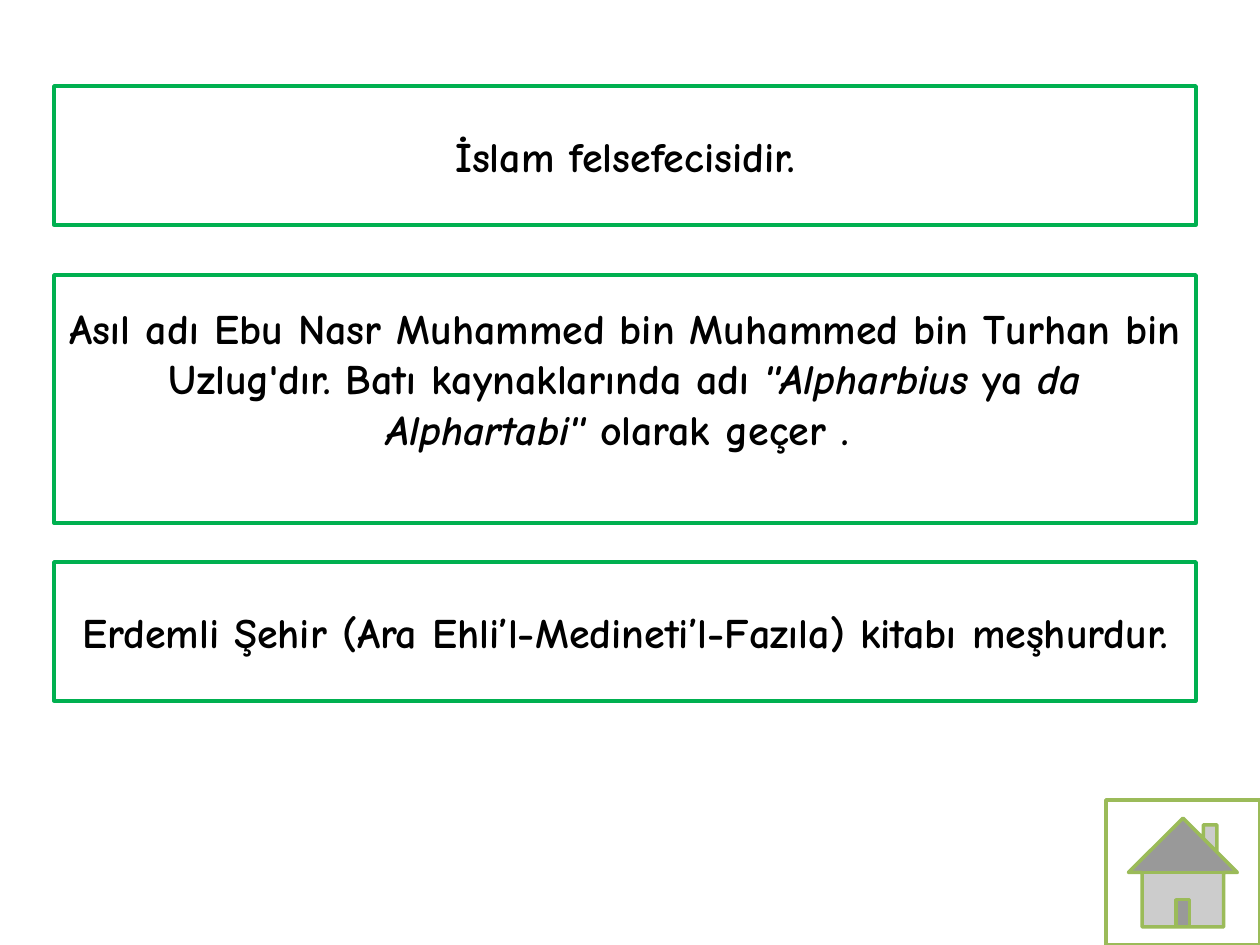
from pptx import Presentation
from pptx.dml.color import RGBColor
from pptx.enum.shapes import MSO_SHAPE as Shape
from pptx.enum.text import MSO_ANCHOR as Anchor, PP_ALIGN as Align
from pptx.util import Pt

PX = 914400 // 126
FONT = "Comic Neue"
COLORS = {"paper": "FFFFFF", "ink": "000000", "frame": "00B050", "home": "9BBB59"}

CARD_LEFT, CARD_WIDTH = 54, 1142
CARDS = [
    {"top": 86, "height": 139, "bottom_inset": 6,
     "parts": [("İslam felsefecisidir.", False)]},
    {"top": 275, "height": 248, "bottom_inset": 48,
     "parts": [
         ("Asıl adı Ebu Nasr Muhammed bin Muhammed bin Turhan bin Uzlug'dır. "
          "Batı kaynaklarında adı ", False),
         ("''Alpharbius ", True),
         ("ya ", False),
         ("da Alphartabi'' ", True),
         ("olarak geçer . ", False),
     ]},
    {"top": 562, "height": 139, "bottom_inset": 6,
     "parts": [("Erdemli Şehir (Ara Ehli’l-Medineti’l-Fazıla) kitabı meşhurdur.", False)]},
]
HOME_BOX = (1106, 800, 154, 145)


def rgb(name):
    return RGBColor.from_string(COLORS[name])


def add_framed(slide, kind, box, frame):
    framed = slide.shapes.add_shape(kind, *(length * PX for length in box))
    framed.shadow.inherit = False
    framed.fill.solid()
    framed.fill.fore_color.rgb = rgb("paper")
    framed.line.color.rgb = rgb(frame)
    framed.line.width = Pt(2)
    return framed


def add_card(slide, card):
    box = (CARD_LEFT, card["top"], CARD_WIDTH, card["height"])
    frame = add_framed(slide, Shape.RECTANGLE, box, "frame").text_frame
    frame.word_wrap = True
    frame.vertical_anchor = Anchor.MIDDLE
    frame.margin_bottom = card["bottom_inset"] * PX
    sentence = frame.paragraphs[0]
    sentence.alignment = Align.CENTER
    for words, italic in card["parts"]:
        part = sentence.add_run()
        part.text = words
        part.font.name = FONT
        part.font.size = Pt(24)
        part.font.bold = True
        part.font.italic = italic
        part.font.color.rgb = rgb("ink")


def main():
    deck = Presentation()
    deck.slide_width, deck.slide_height = 1260 * PX, 945 * PX
    slide = deck.slides.add_slide(deck.slide_layouts[6])
    for card in CARDS:
        add_card(slide, card)
    add_framed(slide, Shape.ACTION_BUTTON_HOME, HOME_BOX, "home")
    deck.save("out.pptx")


if __name__ == "__main__":
    main()
